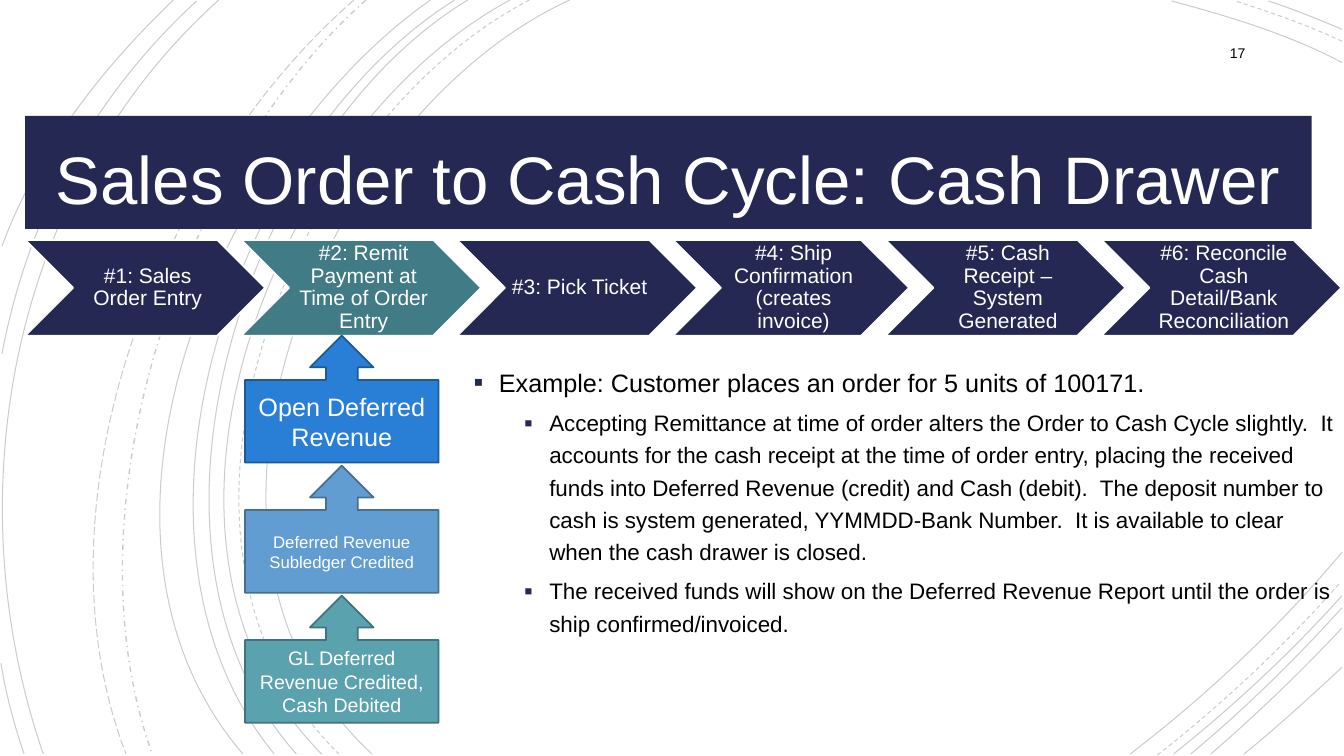
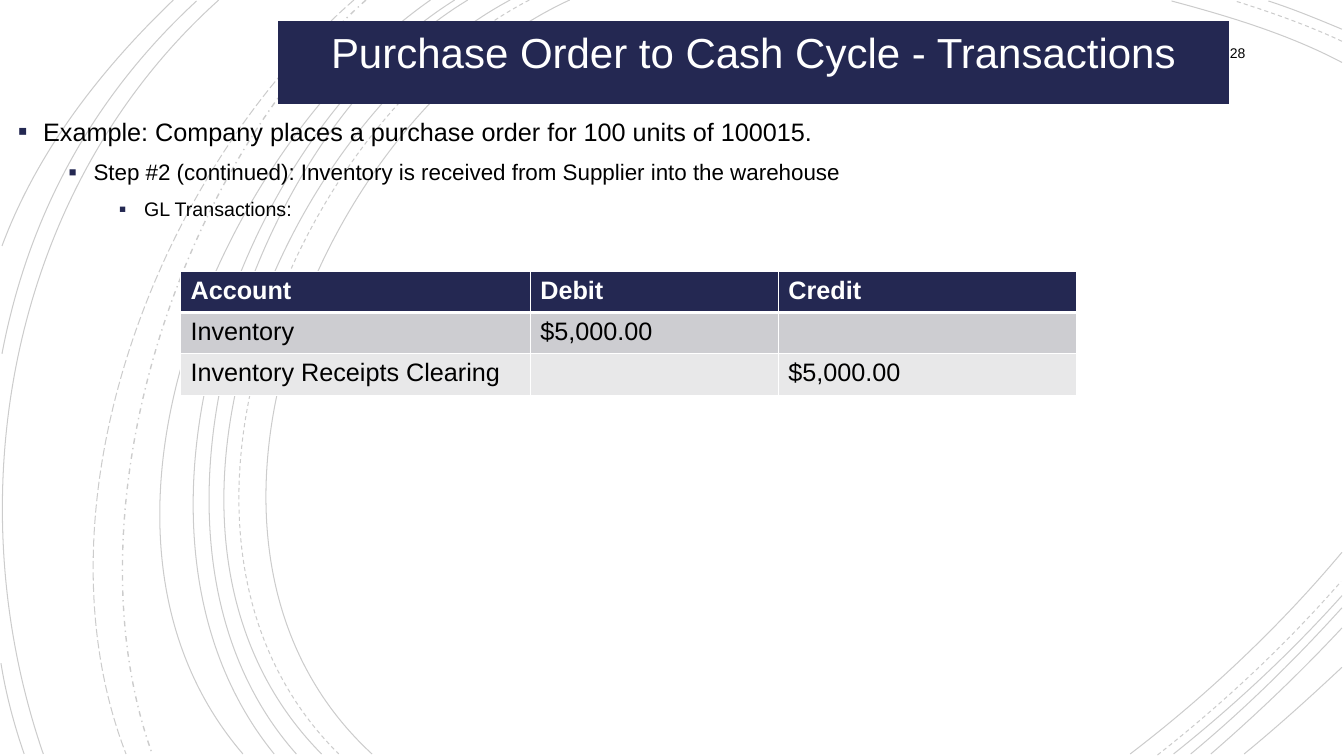
from lxml import etree
from pptx import Presentation
from pptx import util as u
from pptx.dml import color
from pptx.enum import dml, shapes, text
from pptx.oxml import ns

NAVY, TEAL, WHITE, BLACK = "242852", "417B85", "FFFFFF", "000000"
SOLID, DASH, LONG_DASH, DASH_DOT = (
    dml.MSO_LINE.SOLID, dml.MSO_LINE.DASH, dml.MSO_LINE.LONG_DASH, dml.MSO_LINE.DASH_DOT)
LEFT, CENTER, RIGHT = text.PP_ALIGN.LEFT, text.PP_ALIGN.CENTER, text.PP_ALIGN.RIGHT
TOP, MIDDLE = text.MSO_ANCHOR.TOP, text.MSO_ANCHOR.MIDDLE

SWIRLS = {
    (SOLID, 0.75): [
        [(5.65, 0), (3.15, 1.15), (1.43, 5.4), (3.69, 7.48)],
        [(13.31, 0.62), (12.78, 0.34), (12.18, 0.16), (11.62, 0.01)],
        [(11.21, 7.48), (11.97, 6.9), (12.69, 6.22), (13.31, 5.48)],
        [(5.06, 0), (2.7, 1.27), (1.1, 5.37), (3.19, 7.48)],
        [(13.31, 0.29), (13.07, 0.19), (12.83, 0.09), (12.58, 0.01)],
        [(11.64, 7.48), (12.23, 7.01), (12.8, 6.48), (13.31, 5.91)],
        [(4.64, 0), (2.44, 1.33), (1.1, 5.41), (2.94, 7.48)],
        [(11.81, 7.48), (12.34, 7.04), (12.84, 6.55), (13.31, 6.03)],
        [(4.51, 0), (2.31, 1.38), (0.97, 5.33), (2.72, 7.48)],
        [(12.01, 7.48), (12.46, 7.09), (12.9, 6.67), (13.31, 6.23)],
        [(4.27, 0), (2.17, 1.47), (0.53, 5.29), (2.41, 7.48)],
        [(12.34, 7.48), (12.67, 7.21), (12.99, 6.92), (13.31, 6.62)],
        [(2.17, 0), (0.11, 1.85), (-0.46, 4.9), (0.43, 7.48)],
        [(1.95, 0.01), (0.92, 0.96), (0.28, 2.14), (0.02, 3.51)],
        [(0.01, 6.58), (0.06, 6.89), (0.14, 7.19), (0.24, 7.48)],
        [(1.72, 0), (1, 0.69), (0.37, 1.5), (0.02, 2.44)],
    ],
    (DASH, 0.75): [
        [(5.25, 0), (2.85, 1.25), (1.23, 5.37), (3.36, 7.48)],
        [(13.31, 0.41), (12.97, 0.25), (12.6, 0.12), (12.25, 0.01)],
        [(11.48, 7.49), (12.13, 6.98), (12.75, 6.4), (13.3, 5.77)],
    ],
    (DASH_DOT, 1): [[(3.63, 0), (1.76, 1.66), (0.65, 5.09), (1.51, 7.48)]],
    (LONG_DASH, 0.75): [[(3.51, 0), (1.57, 1.69), (0.29, 4.99), (1.25, 7.48)]],
}

STEPS = [
    ("#1: Sales Order Entry", 2.38, NAVY),
    ("#2: Remit Payment at Time of Order Entry", 2.38, TEAL),
    ("#3: Pick Ticket", 2.38, NAVY),
    ("#4: Ship Confirmation (creates invoice)", 2.34, NAVY),
    ("#5: Cash Receipt – System Generated", 2.38, NAVY),
    ("#6: Reconcile Cash Detail/Bank Reconciliation", 2.38, NAVY),
]
POSTINGS = [
    ("Open Deferred Revenue", 18, "297FD5", "1D5A97"),
    ("Deferred Revenue Subledger Credited", 12, "629DD1", "466F94"),
    ("GL Deferred Revenue Credited, Cash Debited", 14, "5AA2AE", "40737B"),
]
REMITTANCE = [
    (0, "Example: Customer places an order for 5 units of 100171."),
    (1, "Accepting Remittance at time of order alters the Order to Cash Cycle slightly.  "
        "It accounts for the cash receipt at the time of order entry, placing the received "
        "funds into Deferred Revenue (credit) and Cash (debit).  The deposit number to cash "
        "is system generated, YYMMDD-Bank Number.  It is available to clear when the cash "
        "drawer is closed."),
    (1, "The received funds will show on the Deferred Revenue Report until the order is "
        "ship confirmed/invoiced."),
]
RECEIPT = [
    (0, "Example: Company places a purchase order for 100 units of 100015."),
    (1, "Step #2 (continued): Inventory is received from Supplier into the warehouse"),
    (2, "GL Transactions:"),
]
LEDGER = [
    ("Account", "Debit", "Credit"),
    ("Inventory", "$5,000.00", ""),
    ("Inventory Receipts Clearing", "", "$5,000.00"),
]


def rgb(code):
    """Turn a hex string into a colour."""
    return color.RGBColor.from_string(code)


def sub(parent, tag, **attributes):
    """Append a drawing element to a parent."""
    return etree.SubElement(parent, ns.qn(tag), attributes)


def write(paragraph, content, size=18, ink=BLACK, bold=False, align=LEFT, spacing=None):
    """Fill a paragraph with formatted text."""
    paragraph.alignment = align
    if spacing:
        paragraph.line_spacing = spacing
    run = paragraph.add_run()
    run.text = content
    run.font.name, run.font.size, run.font.bold = "Arial", u.Pt(size), bold
    run.font.color.rgb = rgb(ink)


def bend(outline):
    """Merge the three segments of an outline into one cubic curve."""
    segments = list(outline.iter(ns.qn("a:lnTo")))
    curve = sub(segments[0].getparent(), "a:cubicBezTo")
    for segment in segments:
        curve.append(segment[0])
        segment.getparent().remove(segment)


class Deck:
    """Hold the shared style and the current slide."""

    def __init__(self):
        """Open an empty widescreen presentation."""
        self.prs = Presentation()
        self.prs.slide_width, self.prs.slide_height = u.Inches(13.33), u.Inches(7.5)

    def add_slide(self, number):
        """Start a slide with its swirls and page number."""
        self.slide = self.prs.slides.add_slide(self.prs.slide_layouts[6])
        self.swirls()
        frame = self.text_frame(11.45, 0.35, 1, 0.35)
        frame.vertical_anchor = MIDDLE
        write(frame.paragraphs[0], number, size=10, align=RIGHT)

    def swirls(self):
        """Draw the faint background curves as one group."""
        group = self.slide.shapes.add_group_shape()
        for (dash, weight), curves in SWIRLS.items():
            for anchors in curves:
                start, *rest = [tuple(map(u.Inches, anchor)) for anchor in anchors]
                builder = group.shapes.build_freeform(*start)
                builder.add_line_segments(rest, close=False)
                swirl = builder.convert_to_shape()
                bend(swirl._element)
                swirl.shadow.inherit = False
                swirl.fill.background()
                swirl.line.width, swirl.line.dash_style = u.Pt(weight), dash
                swirl.line.color.rgb = rgb(BLACK)
                ink = swirl._element.spPr.find(".//" + ns.qn("a:srgbClr"))
                sub(ink, "a:alpha", val="20000")

    def text_frame(self, left, top, width, height):
        """Add a wrapping text box and return its frame."""
        box = self.slide.shapes.add_textbox(*map(u.Inches, (left, top, width, height)))
        box.text_frame.word_wrap = True
        return box.text_frame

    def block(self, kind, place, fill, content, outline=None, anchor=MIDDLE,
              insets=(0.1, 0.05, 0.1, 0.05), **style):
        """Add a filled preset shape with centred white text."""
        shape = self.slide.shapes.add_shape(kind, *map(u.Inches, place))
        shape.shadow.inherit = False
        shape.fill.solid()
        shape.fill.fore_color.rgb = rgb(fill)
        if outline:
            shape.line.color.rgb, shape.line.width = rgb(outline), u.Pt(1.25)
        else:
            shape.line.fill.background()
        frame = shape.text_frame
        frame.word_wrap, frame.vertical_anchor = True, anchor
        (frame.margin_left, frame.margin_top,
         frame.margin_right, frame.margin_bottom) = map(u.Inches, insets)
        write(frame.paragraphs[0], content, ink=WHITE, align=CENTER, **style)

    def title(self, content, place, **style):
        """Add the navy title band."""
        self.block(shapes.MSO_SHAPE.RECTANGLE, place, NAVY, content, anchor=TOP, **style)

    def chevrons(self, steps, left, top, height):
        """Add a row of process steps, each overlapping the last by a tenth."""
        for label, width, fill in steps:
            self.block(shapes.MSO_SHAPE.CHEVRON, (left, top, width, height), fill, label,
                       outline=WHITE, insets=(0.06, 0.02, 0.01, 0.02), size=15, spacing=0.9)
            left += width * 0.9

    def callouts(self, postings, left, top, pitch):
        """Stack the upward callouts at an equal pitch."""
        for row, (label, size, fill, outline) in enumerate(postings):
            self.block(shapes.MSO_SHAPE.UP_ARROW_CALLOUT,
                       (left, top + row * pitch, 1.92, 1.26), fill, label,
                       outline=outline, size=size)

    def bullets(self, items, *place):
        """Add an indented list with square bullets."""
        frame = self.text_frame(*place)
        for index, (level, content) in enumerate(items):
            paragraph = frame.add_paragraph() if index else frame.paragraphs[0]
            paragraph.level = level
            props = paragraph._p.get_or_add_pPr()
            props.set("marL", str(u.Inches(0.25 + 0.5 * level)))
            props.set("indent", str(u.Inches(-0.25)))
            sub(sub(props, "a:buClr"), "a:srgbClr", val=NAVY)
            sub(props, "a:buSzPct", val="110000")
            sub(props, "a:buFont", typeface="Arial")
            sub(props, "a:buChar", char="▪")
            if index:
                paragraph.space_before = u.Pt(5)
            write(paragraph, content, size=18 - 2 * level, spacing=1.2)

    def table(self, rows, left, top, widths, row_height):
        """Add a ledger table with a navy header and white rules."""
        grid = self.slide.shapes.add_table(
            len(rows), len(widths), *map(u.Inches, (left, top, sum(widths),
                                                    row_height * len(rows)))).table
        for column, width in zip(grid.columns, widths):
            column.width = u.Inches(width)
        for r, (row, fill) in enumerate(zip(rows, (NAVY, "CDCDD1", "E8E8E9"))):
            grid.rows[r].height = u.Inches(row_height)
            rules = {"L": 1, "R": 1, "T": 3 if r == 1 else 1, "B": 3 if r == 0 else 1}
            for c, content in enumerate(row):
                cell = grid.cell(r, c)
                props = cell._tc.get_or_add_tcPr()
                for side, weight in rules.items():
                    rule = sub(props, "a:ln" + side, w=str(u.Pt(weight)))
                    sub(sub(rule, "a:solidFill"), "a:srgbClr", val=WHITE)
                cell.fill.solid()
                cell.fill.fore_color.rgb = rgb(fill)
                if content:
                    write(cell.text_frame.paragraphs[0], content,
                          ink=BLACK if r else WHITE, bold=r == 0)


def main():
    """Build both slides and save them."""
    deck = Deck()

    deck.add_slide("17")
    deck.title("Sales Order to Cash Cycle: Cash Drawer", (0.25, 1.15, 12.76, 1.12),
               size=48, spacing=1.2)
    deck.chevrons(STEPS, 0.25, 2.38, 0.95)
    deck.bullets(REMITTANCE, 4.6, 3.53, 8.74, 3.81)
    deck.callouts(POSTINGS, 2.43, 3.33, 1.29)

    deck.add_slide("28")
    deck.bullets(RECEIPT, 0.08, 1.04, 13.25, 6.12)
    deck.title("Purchase Order to Cash Cycle - Transactions", (2.76, 0.21, 9.43, 0.82), size=30)
    deck.table(LEDGER, 1.79, 2.69, (3.47, 2.46, 2.96), 0.41)

    deck.prs.save("out.pptx")


if __name__ == "__main__":
    main()
